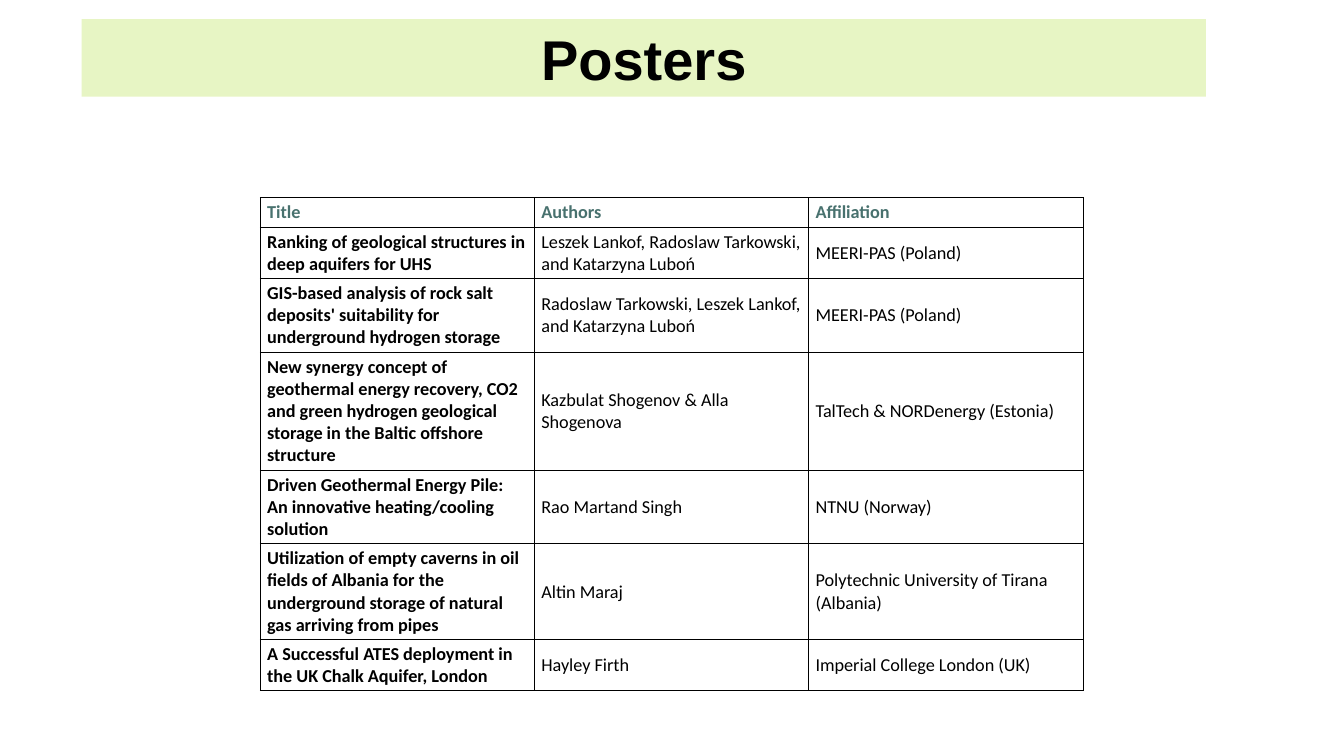
from lxml.etree import SubElement
from pptx import Presentation
from pptx.dml.color import RGBColor
from pptx.enum.shapes import MSO_SHAPE
from pptx.enum.text import MSO_ANCHOR, MSO_AUTO_SIZE, PP_ALIGN
from pptx.oxml.ns import qn
from pptx.util import Emu, Pt

EMU_PER_PX = 9144  # 100 px to the inch
BLACK, TEAL, LIME = "000000", "48716E", "D4EE92"

HEADINGS = ("Title", "Authors", "Affiliation")
POSTERS = [
    ("Ranking of geological structures in deep aquifers for UHS",
     "Leszek Lankof, Radoslaw Tarkowski, and Katarzyna Luboń",
     "MEERI-PAS (Poland)"),
    ("GIS-based analysis of rock salt deposits' suitability for underground hydrogen storage",
     "Radoslaw Tarkowski, Leszek Lankof, and Katarzyna Luboń",
     "MEERI-PAS (Poland)"),
    ("New synergy concept of geothermal energy recovery, CO2 and green hydrogen "
     "geological storage in the Baltic offshore structure",
     "Kazbulat Shogenov & Alla Shogenova",
     "TalTech & NORDenergy (Estonia)"),
    ("Driven Geothermal Energy Pile: An innovative heating/cooling solution",
     "Rao Martand Singh",
     "NTNU (Norway)"),
    ("Utilization of empty caverns in oil fields of Albania for the underground "
     "storage of natural gas arriving from pipes",
     "Altin Maraj",
     "Polytechnic University of Tirana (Albania)"),
    ("A Successful ATES deployment in the UK Chalk Aquifer, London",
     "Hayley Firth",
     "Imperial College London (UK)"),
]
ROW_HEIGHTS = (28, 50, 71, 114, 71, 92, 50)


def px(length):
    return Emu(length * EMU_PER_PX)


def color(hex_string):
    return RGBColor.from_string(hex_string)


def style(paragraph, face, size, bold, hex_string):
    font = paragraph.font
    font.name, font.size, font.bold = face, Pt(size), bold
    font.color.rgb = color(hex_string)


def add_borders(cell, hex_string, width):
    properties = cell._tc.get_or_add_tcPr()
    for side in ("a:lnL", "a:lnR", "a:lnT", "a:lnB"):
        line = SubElement(properties, qn(side), w=str(Pt(width)))
        SubElement(SubElement(line, qn("a:solidFill")), qn("a:srgbClr"), val=hex_string)


def add_banner(slide, left, top, width, height):
    banner = slide.shapes.add_shape(
        MSO_SHAPE.RECTANGLE, px(left), px(top), px(width), px(height))
    banner.shadow.inherit = False
    banner.line.fill.background()
    banner.fill.solid()
    banner.fill.fore_color.rgb = color(LIME)
    # Translucent fill
    tint = banner.fill._xPr.find(".//" + qn("a:srgbClr"))
    SubElement(tint, qn("a:alpha"), val="54000")

    frame = banner.text_frame
    frame.word_wrap = True
    frame.auto_size = MSO_AUTO_SIZE.SHAPE_TO_FIT_TEXT
    heading = frame.paragraphs[0]
    heading.text = "Posters"
    heading.alignment = PP_ALIGN.CENTER
    style(heading, "Arial", 40, True, BLACK)


def add_poster_table(slide, left, top, width):
    rows = [HEADINGS, *POSTERS]
    table = slide.shapes.add_table(
        len(rows), len(HEADINGS), px(left), px(top), px(width), px(sum(ROW_HEIGHTS))).table
    table.horz_banding = False
    for column in table.columns:
        column.width = px(width // len(HEADINGS))
    for r, (texts, height) in enumerate(zip(rows, ROW_HEIGHTS)):
        table.rows[r].height = px(height)
        for c, text in enumerate(texts):
            cell = table.cell(r, c)
            add_borders(cell, BLACK, 0.43)
            cell.fill.background()
            cell.vertical_anchor = MSO_ANCHOR.MIDDLE
            cell.margin_left = cell.margin_right = px(7)
            cell.margin_top, cell.margin_bottom = px(4), px(3)
            entry = cell.text_frame.paragraphs[0]
            entry.text = text
            # Headings and poster titles are bold
            style(entry, "Calibri", 13, r == 0 or c == 0, TEAL if r == 0 else BLACK)


def main():
    deck = Presentation()
    deck.slide_width, deck.slide_height = px(1333), px(750)
    slide = deck.slides.add_slide(deck.slide_layouts[6])
    add_poster_table(slide, 258, 196, 816)
    add_banner(slide, 81, 19, 1115, 77)
    deck.save("out.pptx")


if __name__ == "__main__":
    main()
